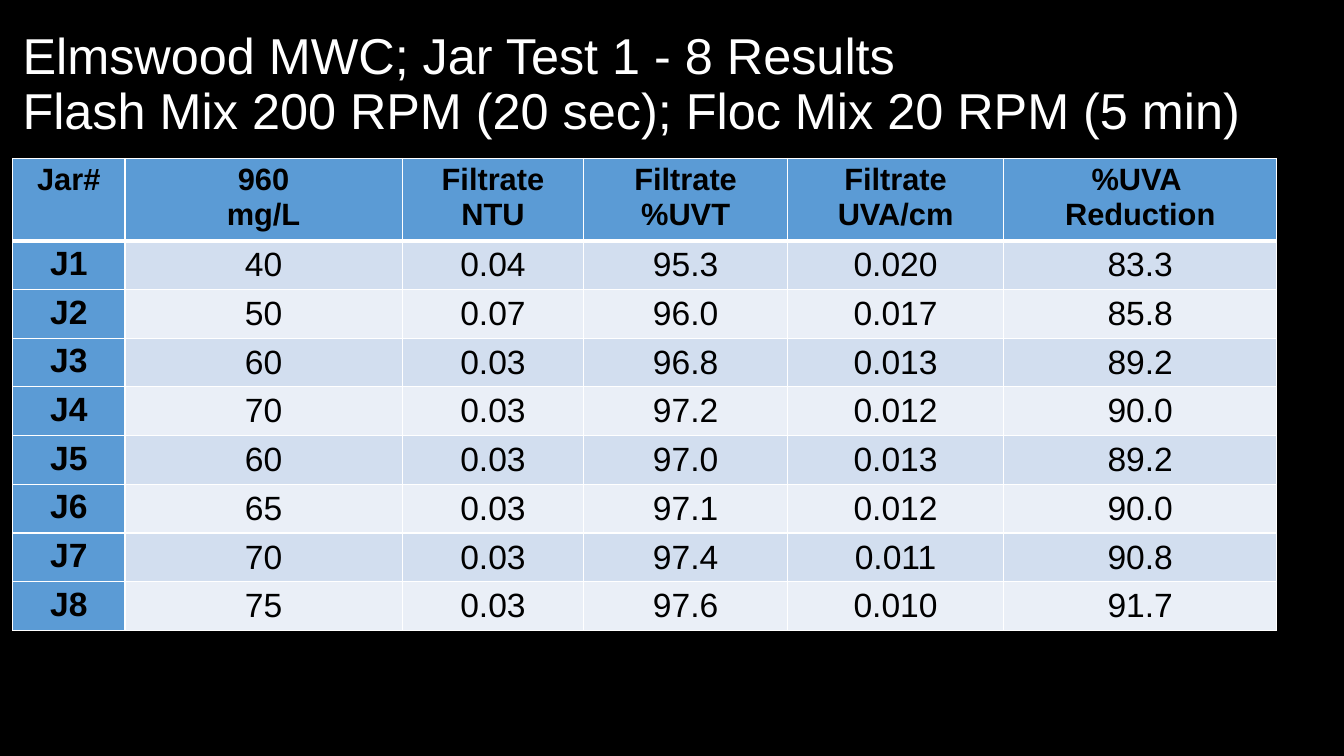
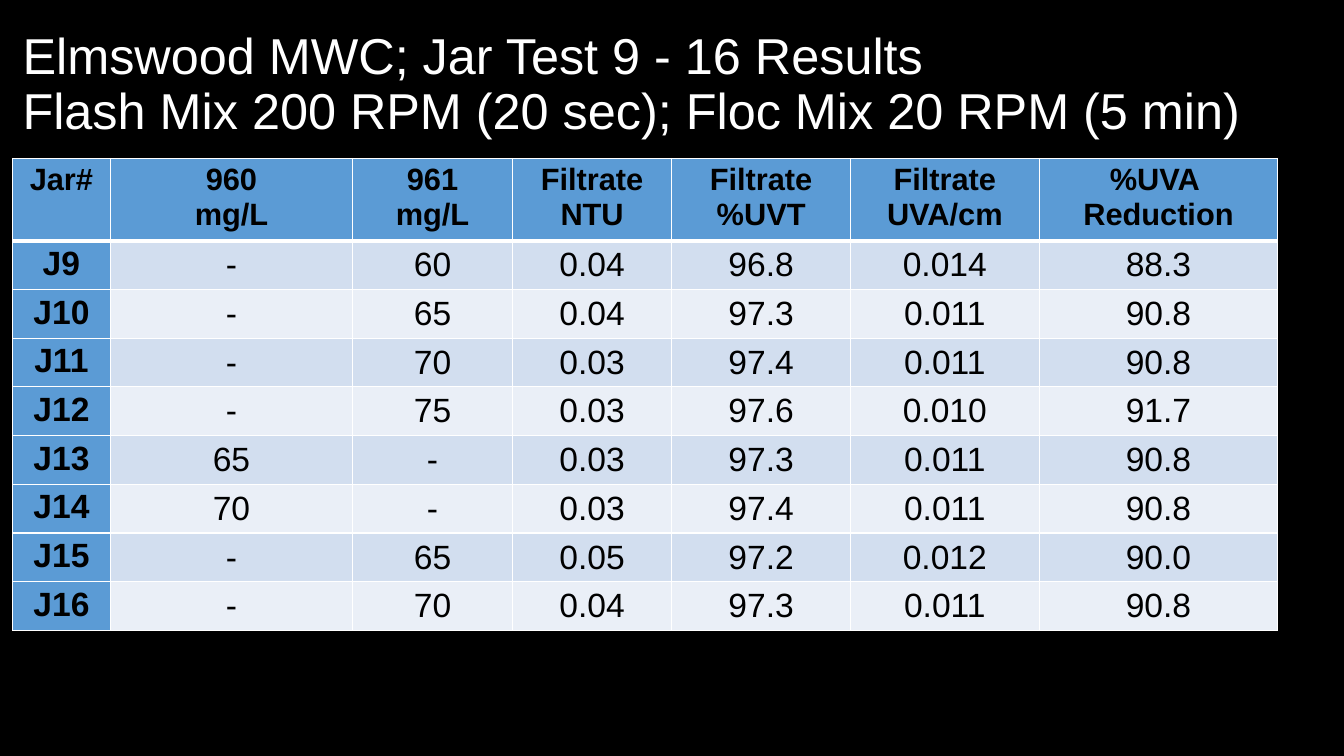
from pptx import Presentation
from pptx.dml.color import RGBColor
from pptx.enum.text import MSO_ANCHOR as Anchor, PP_ALIGN as Align
from pptx.oxml.ns import qn
from pptx.util import Emu, Pt
from lxml.etree import SubElement

PX = 9525
SLIDE_WIDTH, SLIDE_HEIGHT = 1280, 720
BLACK = RGBColor(0x00, 0x00, 0x00)
WHITE = RGBColor(0xFF, 0xFF, 0xFF)
HEADER_BLUE = RGBColor(0x5B, 0x9B, 0xD5)
BANDS = (RGBColor(0xD2, 0xDE, 0xEF), RGBColor(0xEA, 0xEF, 0xF7))
FONT = "Arial"

LEFT, TITLE_TOP, TITLE_WIDTH, TITLE_HEIGHT = 12, 12, 1251, 139
TABLE_TOP, TABLE_HEIGHT, HEADER_HEIGHT = 151, 439, 76
LABEL_MARGIN, VALUE_MARGIN = 4, 1

MIX = "Flash Mix 200 RPM (20 sec); Floc Mix 20 RPM (5 min)"
FILTRATE_HEADERS = ["Filtrate\nNTU", "Filtrate\n%UVT", "Filtrate\nUVA/cm",
                    "%UVA \nReduction"]

FIRST_HEADERS = ["Jar#", "960\nmg/L"] + FILTRATE_HEADERS
FIRST_WIDTHS = [107, 264, 173, 194, 206, 260]
FIRST_JARS = [
    ["J1", "40", "0.04", "95.3", "0.020", "83.3"],
    ["J2", "50", "0.07", "96.0", "0.017", "85.8"],
    ["J3", "60", "0.03", "96.8", "0.013", "89.2"],
    ["J4", "70", "0.03", "97.2", "0.012", "90.0"],
    ["J5", "60", "0.03", "97.0", "0.013", "89.2"],
    ["J6", "65", "0.03", "97.1", "0.012", "90.0"],
    ["J7", "70", "0.03", "97.4", "0.011", "90.8"],
    ["J8", "75", "0.03", "97.6", "0.010", "91.7"],
]

SECOND_HEADERS = ["Jar#", "960\nmg/L", "961\nmg/L"] + FILTRATE_HEADERS
SECOND_WIDTHS = [93, 231, 152, 152, 170, 180, 227]
SECOND_JARS = [
    ["J9", "-", "60", "0.04", "96.8", "0.014", "88.3"],
    ["J10", "-", "65", "0.04", "97.3", "0.011", "90.8"],
    ["J11", "-", "70", "0.03", "97.4", "0.011", "90.8"],
    ["J12", "-", "75", "0.03", "97.6", "0.010", "91.7"],
    ["J13", "65", "-", "0.03", "97.3", "0.011", "90.8"],
    ["J14", "70", "-", "0.03", "97.4", "0.011", "90.8"],
    ["J15", "-", "65", "0.05", "97.2", "0.012", "90.0"],
    ["J16", "-", "70", "0.04", "97.3", "0.011", "90.8"],
]


def px(length):
    return Emu(round(length * PX))


def format_text(frame, size, color, bold=False, align=Align.LEFT):
    for para in frame.paragraphs:
        para.alignment = align
        for span in para.runs:
            span.font.name = FONT
            span.font.size = Pt(size)
            span.font.bold = bold
            span.font.color.rgb = color


def add_title(slide, text):
    box = slide.shapes.add_textbox(px(LEFT), px(TITLE_TOP),
                                   px(TITLE_WIDTH), px(TITLE_HEIGHT))
    frame = box.text_frame
    frame.word_wrap = True
    frame.vertical_anchor = Anchor.MIDDLE
    frame.paragraphs[0].text = text
    frame.paragraphs[0].line_spacing = 0.9
    format_text(frame, 36, WHITE)


def add_borders(cell, row):
    """Draw white cell edges, thicker between the header and the first jar."""
    properties = cell._tc.get_or_add_tcPr()
    widths = {"lnL": 1, "lnR": 1, "lnT": 3 if row == 1 else 1,
              "lnB": 3 if row == 0 else 1}
    for tag, width in widths.items():
        line = SubElement(properties, qn(f"a:{tag}"), w=str(Pt(width)))
        fill = SubElement(line, qn("a:solidFill"))
        SubElement(fill, qn("a:srgbClr"), val=str(WHITE))


def style_cell(cell, row, column):
    is_header, is_label = row == 0, column == 0
    is_value = not (is_header or is_label)
    add_borders(cell, row)
    cell.fill.solid()
    cell.fill.fore_color.rgb = BANDS[(row - 1) % 2] if is_value else HEADER_BLUE
    cell.vertical_anchor = Anchor.MIDDLE if is_value else Anchor.TOP
    margin = px(VALUE_MARGIN if is_value else LABEL_MARGIN)
    cell.margin_top = cell.margin_bottom = margin
    if is_value:
        cell.margin_left = cell.margin_right = margin
    format_text(cell.text_frame, 22 if is_header else 24, BLACK,
                bold=not is_value, align=Align.CENTER)


def add_results_table(slide, headers, widths, jars):
    rows = [headers] + jars
    table = slide.shapes.add_table(
        len(rows), len(headers), px(LEFT), px(TABLE_TOP),
        px(sum(widths)), px(TABLE_HEIGHT)).table
    for column, width in zip(table.columns, widths):
        column.width = px(width)
    jar_height = (TABLE_HEIGHT - HEADER_HEIGHT) / len(jars)
    for row, texts in enumerate(rows):
        table.rows[row].height = px(jar_height if row else HEADER_HEIGHT)
        for column, text in enumerate(texts):
            cell = table.cell(row, column)
            cell.text_frame.text = text
            style_cell(cell, row, column)


def add_results_slide(deck, jar_range, headers, widths, jars):
    slide = deck.slides.add_slide(deck.slide_layouts[6])
    slide.background.fill.solid()
    slide.background.fill.fore_color.rgb = BLACK
    add_title(slide, f"Elmswood MWC; Jar Test {jar_range} Results\v{MIX}")
    add_results_table(slide, headers, widths, jars)


def main():
    deck = Presentation()
    deck.slide_width, deck.slide_height = px(SLIDE_WIDTH), px(SLIDE_HEIGHT)
    add_results_slide(deck, "1 - 8", FIRST_HEADERS, FIRST_WIDTHS, FIRST_JARS)
    add_results_slide(deck, "9 - 16", SECOND_HEADERS, SECOND_WIDTHS, SECOND_JARS)
    deck.save("out.pptx")


if __name__ == "__main__":
    main()
